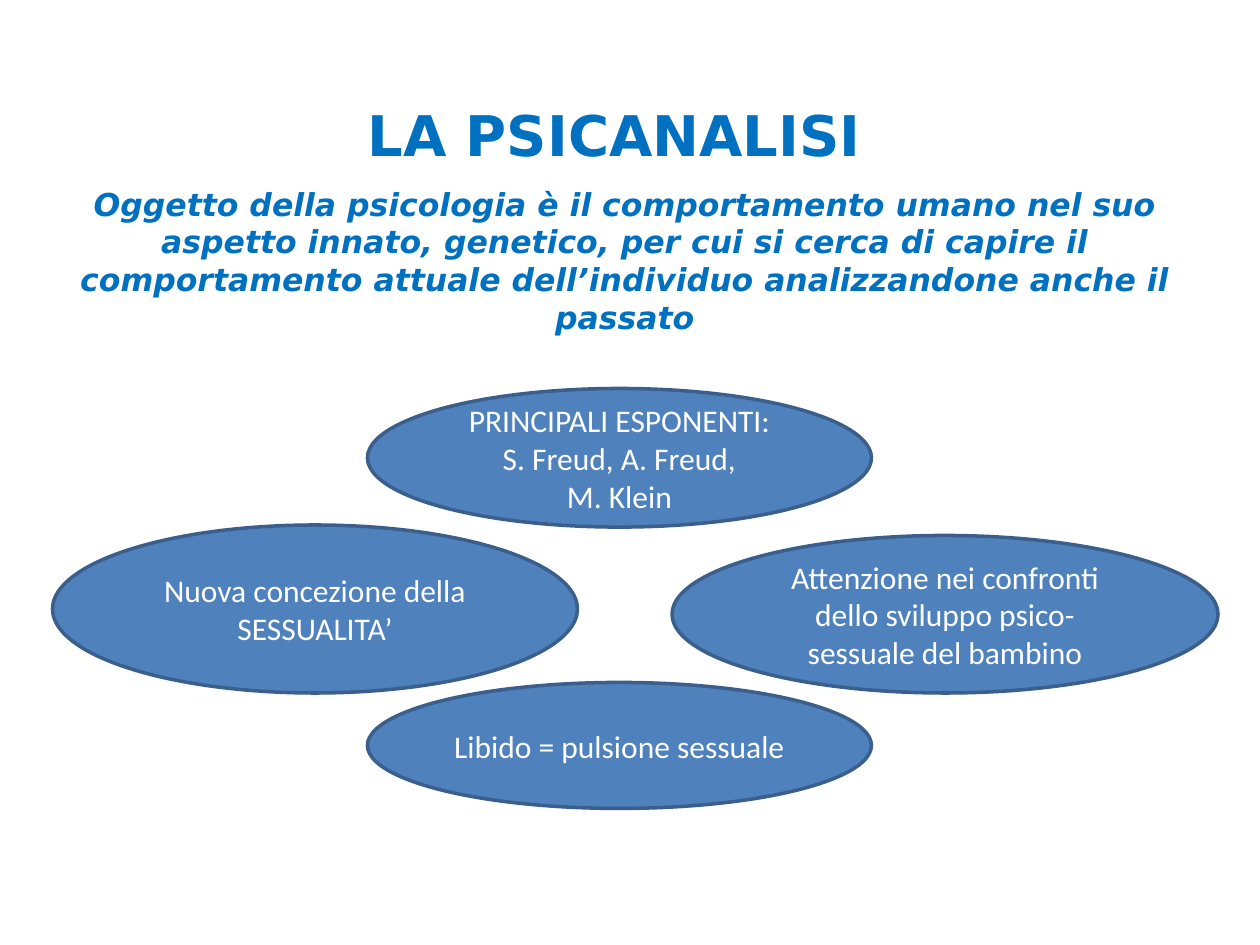
from dataclasses import dataclass

from pptx import Presentation
from pptx.dml.color import RGBColor
from pptx.enum.shapes import MSO_SHAPE
from pptx.enum.text import MSO_ANCHOR, PP_ALIGN
from pptx.util import Inches, Pt

COLS, ROWS = 120, 90


@dataclass(frozen=True)
class Theme:
    blue: RGBColor = RGBColor.from_string("0070C0")
    fill: RGBColor = RGBColor.from_string("4F81BD")
    edge: RGBColor = RGBColor.from_string("3A5F8C")
    white: RGBColor = RGBColor.from_string("FFFFFF")
    head: str = "DejaVu Sans"
    body: str = "Calibri"
    large: int = 32
    small: int = 18
    line: int = 2


THEME = Theme()


@dataclass(frozen=True)
class Box:
    x: float
    y: float
    w: float
    h: float

    def inner(self, x, y, w, h):
        return Box(self.x + x, self.y + y, w, h)

    def place(self):
        return [Inches(n * 10 / COLS) for n in (self.x, self.y, self.w, self.h)]


def write(frame, lines, face, size, color, bold=None, slant=None):
    frame.word_wrap = True
    for i, line in enumerate(lines):
        para = frame.paragraphs[0] if i == 0 else frame.add_paragraph()
        para.text = line
        para.alignment = PP_ALIGN.CENTER
        font = para.font
        font.name, font.size = face, Pt(size)
        font.bold, font.italic = bold, slant
        font.color.rgb = color


def add_head(slide, box):
    title = slide.shapes.add_textbox(*box.inner(27, 0, 61, 7.7).place())
    write(title.text_frame, ["LA PSICANALISI"],
          THEME.head, THEME.large, THEME.blue, True)
    topic = slide.shapes.add_textbox(*box.inner(0, 8, box.w, box.h - 8).place())
    write(topic.text_frame,
          ["Oggetto della psicologia è il comportamento umano nel suo aspetto "
           "innato, genetico, per cui si cerca di capire il comportamento "
           "attuale dell’individuo analizzandone anche il passato"],
          THEME.head, THEME.small, THEME.blue, True, True)


def add_oval(slide, box, lines):
    oval = slide.shapes.add_shape(MSO_SHAPE.OVAL, *box.place())
    oval.shadow.inherit = False
    oval.fill.solid()
    oval.fill.fore_color.rgb = THEME.fill
    oval.line.color.rgb = THEME.edge
    oval.line.width = Pt(THEME.line)
    oval.text_frame.vertical_anchor = MSO_ANCHOR.MIDDLE
    write(oval.text_frame, lines, THEME.body, THEME.small, THEME.white)


def add_ring(slide, box):
    ovals = [
        ((30, 0, 48, 13.2),
         ["PRINCIPALI ESPONENTI:", "S. Freud, A. Freud,", "M. Klein"]),
        ((59, 14, 52, 15),
         ["Attenzione nei confronti dello sviluppo psico-sessuale del bambino"]),
        ((0, 13, 50, 16), ["Nuova concezione della SESSUALITA’"]),
        ((30, 28, 48, 12), ["Libido = pulsione sessuale"]),
    ]
    for cell, lines in ovals:
        add_oval(slide, box.inner(*cell), lines)


def main():
    deck = Presentation()
    deck.slide_width = Inches(10)
    deck.slide_height = Inches(10 * ROWS / COLS)
    slide = deck.slides.add_slide(deck.slide_layouts[6])
    add_head(slide, Box(1, 9, 117, 20))
    add_ring(slide, Box(5, 37, 111, 40))
    deck.save("out.pptx")


if __name__ == "__main__":
    main()
